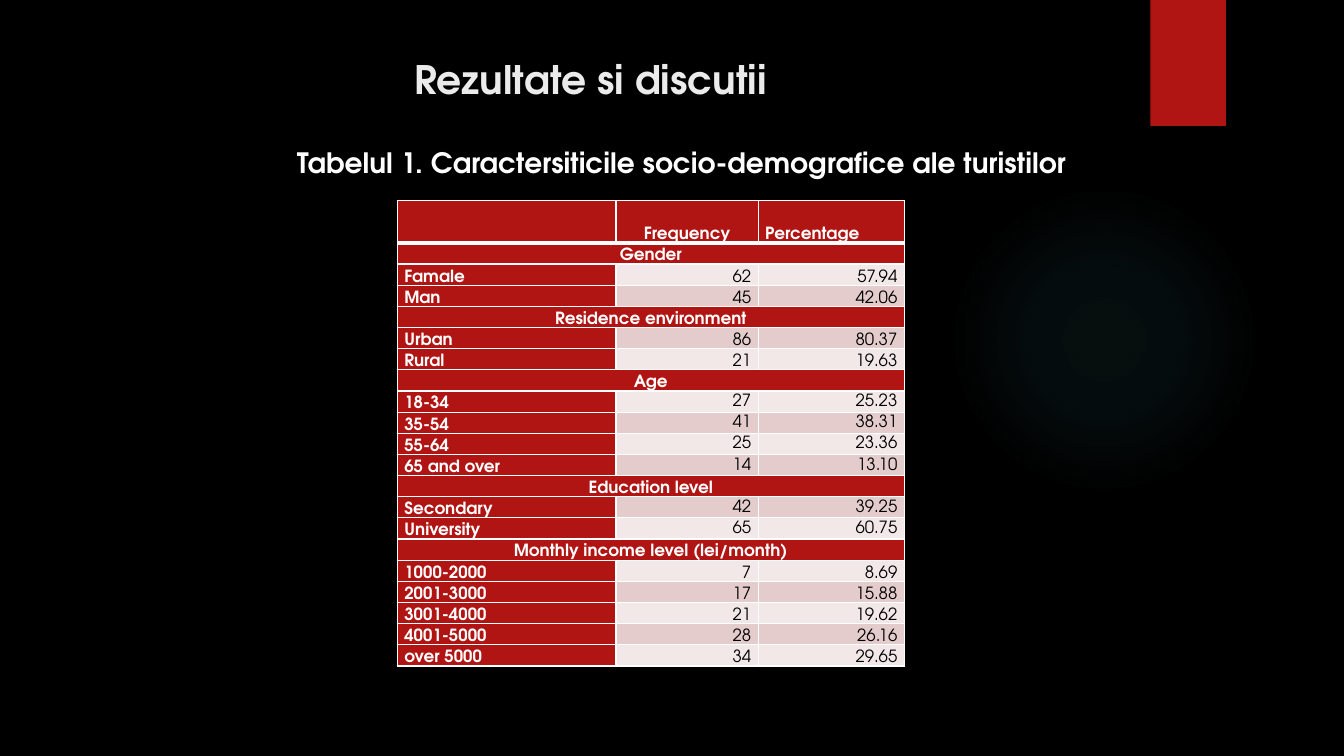
from dataclasses import dataclass

from pptx import Presentation
from pptx.dml.color import RGBColor
from pptx.enum.shapes import MSO_SHAPE
from pptx.enum.text import MSO_ANCHOR, PP_ALIGN
from pptx.oxml import parse_xml
from pptx.oxml.ns import nsdecls
from pptx.util import Inches, Pt

LEFT, CENTER, RIGHT = PP_ALIGN.LEFT, PP_ALIGN.CENTER, PP_ALIGN.RIGHT
TOP, MIDDLE, BOTTOM = MSO_ANCHOR.TOP, MSO_ANCHOR.MIDDLE, MSO_ANCHOR.BOTTOM
OVAL, RECTANGLE = MSO_SHAPE.OVAL, MSO_SHAPE.RECTANGLE

BLACK = RGBColor(0x00, 0x00, 0x00)
WHITE = RGBColor(0xFF, 0xFF, 0xFF)
TITLE_GREY = RGBColor(0xEB, 0xEB, 0xEB)
RED = RGBColor(0xB0, 0x15, 0x13)
GLOW = RGBColor(0x50, 0xB9, 0xC1)
BANDS = (RGBColor(0xF2, 0xE8, 0xE7), RGBColor(0xE4, 0xCC, 0xCC))

FONT = "TeX Gyre Adventor"
COLUMN_WIDTHS = (2.17, 1.41, 1.45)
HEADER_HEIGHT, ROW_HEIGHT = 0.42, 0.21
GLOW_STOPS = ((0, 7), (36, 6), (69, 0))


@dataclass(frozen=True)
class Group:
    name: str
    rows: tuple[tuple[str, str, str], ...]
    value_anchor: MSO_ANCHOR = BOTTOM


@dataclass(frozen=True)
class CellStyle:
    fill: RGBColor = RED
    color: RGBColor = WHITE
    bold: bool = True
    align: PP_ALIGN = LEFT
    anchor: MSO_ANCHOR = BOTTOM


GROUPS = (
    Group("Gender", (("Famale", "62", "57.94"), ("Man", "45", "42.06"))),
    Group("Residence environment", (("Urban", "86", "80.37"), ("Rural", "21", "19.63"))),
    Group("Age", (
        ("18-34", "27", "25.23"),
        ("35-54", "41", "38.31"),
        ("55-64", "25", "23.36"),
        ("65 and over", "14", "13.10"),
    ), MIDDLE),
    Group("Education level", (
        ("Secondary", "42", "39.25"),
        ("University", "65", "60.75"),
    ), MIDDLE),
    Group("Monthly income level (lei/month)", (
        ("1000-2000", "7", "8.69"),
        ("2001-3000", "17", "15.88"),
        ("3001-4000", "21", "19.62"),
        ("4001-5000", "28", "26.16"),
        ("over 5000", "34", "29.65"),
    )),
)


def place(shape, left: float, top: float, width: float, height: float) -> None:
    shape.left, shape.top = Inches(left), Inches(top)
    shape.width, shape.height = Inches(width), Inches(height)


def format_text(paragraph, size: int, color: RGBColor, bold: bool, align: PP_ALIGN) -> None:
    paragraph.alignment = align
    for span in paragraph.runs:
        span.font.name = FONT
        span.font.size = Pt(size)
        span.font.bold = bold
        span.font.color.rgb = color


def fill_placeholder(box, text: str, size: int, color: RGBColor) -> None:
    """Put one centred bold line without a bullet into a placeholder."""
    frame = box.text_frame
    frame.text = text
    frame.word_wrap = True
    frame.vertical_anchor = TOP
    para = frame.paragraphs[0]
    properties = para._p.get_or_add_pPr()
    properties.set("marL", "0")
    properties.set("indent", "0")
    properties.append(parse_xml(f"<a:buNone {nsdecls('a')}/>"))
    para.space_before = Pt(0)
    format_text(para, size, color, True, CENTER)


def add_decoration(page, preset: MSO_SHAPE, left: float, top: float, width: float, height: float):
    """Add a plain red shape behind the placeholders."""
    shape = page.shapes.add_shape(
        preset, Inches(left), Inches(top), Inches(width), Inches(height))
    shape.shadow.inherit = False
    shape.fill.solid()
    shape.fill.fore_color.rgb = RED
    shape.line.fill.background()
    page.shapes.title.element.addprevious(shape.element)
    return shape


def apply_glow(shape) -> None:
    """Replace the solid fill with a transparent radial gradient."""
    stops = "".join(
        f'<a:gs pos="{position * 1000}"><a:srgbClr val="{GLOW}">'
        f'<a:alpha val="{alpha * 1000}"/></a:srgbClr></a:gs>'
        for position, alpha in GLOW_STOPS)
    gradient = parse_xml(
        f'<a:gradFill {nsdecls("a")}><a:gsLst>{stops}</a:gsLst><a:path path="circle">'
        '<a:fillToRect l="50000" t="50000" r="50000" b="50000"/></a:path></a:gradFill>')
    properties = shape.element.spPr
    properties.replace(properties.find("{*}solidFill"), gradient)


def set_borders(cell, top: int, bottom: int) -> None:
    """Draw white borders; widths are in points."""
    properties = cell._tc.get_or_add_tcPr()
    sides = (("L", 1), ("R", 1), ("T", top), ("B", bottom))
    for index, (side, width) in enumerate(sides):
        properties.insert(index, parse_xml(
            f'<a:ln{side} {nsdecls("a")} w="{Pt(width)}"><a:solidFill>'
            f'<a:srgbClr val="{WHITE}"/></a:solidFill></a:ln{side}>'))


def write_cell(cell, text: str, style: CellStyle) -> None:
    cell.text = text
    cell.fill.solid()
    cell.fill.fore_color.rgb = style.fill
    cell.vertical_anchor = style.anchor
    cell.margin_left = cell.margin_right = Inches(0.07)
    cell.margin_top = cell.margin_bottom = 0
    para = cell.text_frame.paragraphs[0]
    para.line_spacing = 1.07
    format_text(para, 12, style.color, style.bold, style.align)


def add_tourist_table(page) -> None:
    row_count = 1 + sum(1 + len(group.rows) for group in GROUPS)
    height = HEADER_HEIGHT + ROW_HEIGHT * (row_count - 1)
    table = page.shapes.add_table(
        row_count, len(COLUMN_WIDTHS), Inches(3.94), Inches(1.99),
        Inches(sum(COLUMN_WIDTHS)), Inches(height)).table
    table.horz_banding = False
    for column, width in zip(table.columns, COLUMN_WIDTHS):
        column.width = Inches(width)
    for index, row in enumerate(table.rows):
        row.height = Inches(ROW_HEIGHT if index else HEADER_HEIGHT)

    label, heading = CellStyle(), CellStyle(align=CENTER)
    for column, (text, style) in enumerate(
            (("", label), ("Frequency", heading), ("Percentage", label))):
        write_cell(table.cell(0, column), text, style)

    index = 1
    for group in GROUPS:
        table.cell(index, 0).merge(table.cell(index, 2))
        write_cell(table.cell(index, 0), group.name, heading)
        for index, (name, *values) in enumerate(group.rows, index + 1):
            write_cell(table.cell(index, 0), name, label)
            value_style = CellStyle(BANDS[index % 2], BLACK, False, RIGHT, group.value_anchor)
            for column, value in enumerate(values, 1):
                write_cell(table.cell(index, column), value, value_style)
        index += 1

    for index, row in enumerate(table.rows):
        for cell in row.cells:
            set_borders(cell, 3 if index == 1 else 1, 3 if index == 0 else 1)


def main() -> None:
    deck = Presentation()
    deck.slide_width, deck.slide_height = Inches(13.33), Inches(7.5)
    page = deck.slides.add_slide(deck.slide_layouts[1])
    page.background.fill.solid()
    page.background.fill.fore_color.rgb = BLACK

    apply_glow(add_decoration(page, OVAL, 9.41, 1.83, 3.08, 3.08))
    add_decoration(page, RECTANGLE, 11.41, 0, 0.75, 1.25)

    title, body = page.shapes.title, page.placeholders[1]
    place(title, 0.71, 0.5, 10.29, 0.7)
    fill_placeholder(title, "Rezultate si discutii", 28, TITLE_GREY)
    place(body, 1.08, 1.39, 11.36, 5.53)
    fill_placeholder(
        body, "Tabelul 1. Caractersiticile socio-demografice ale turistilor", 20, WHITE)

    add_tourist_table(page)
    deck.save("out.pptx")


if __name__ == "__main__":
    main()
